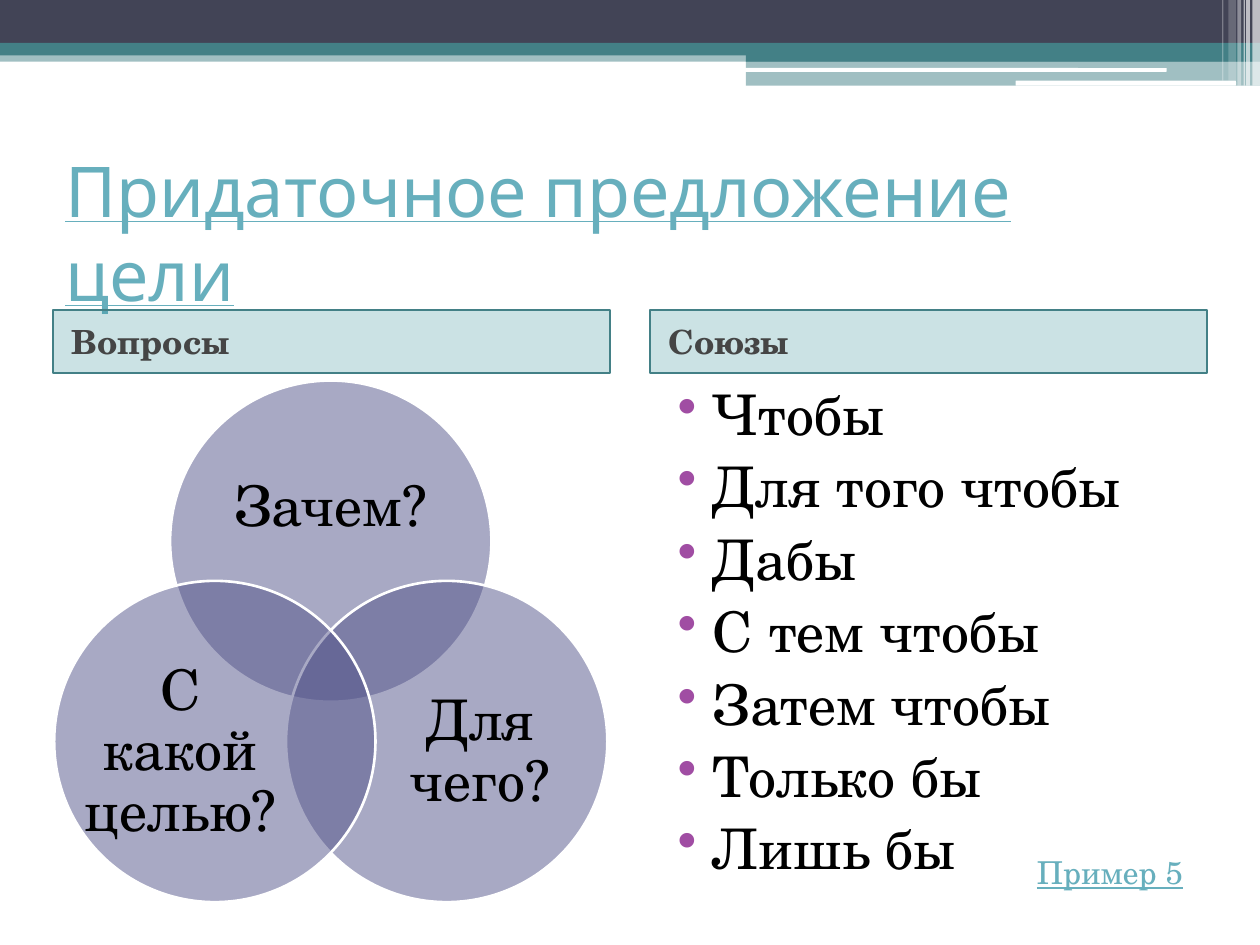
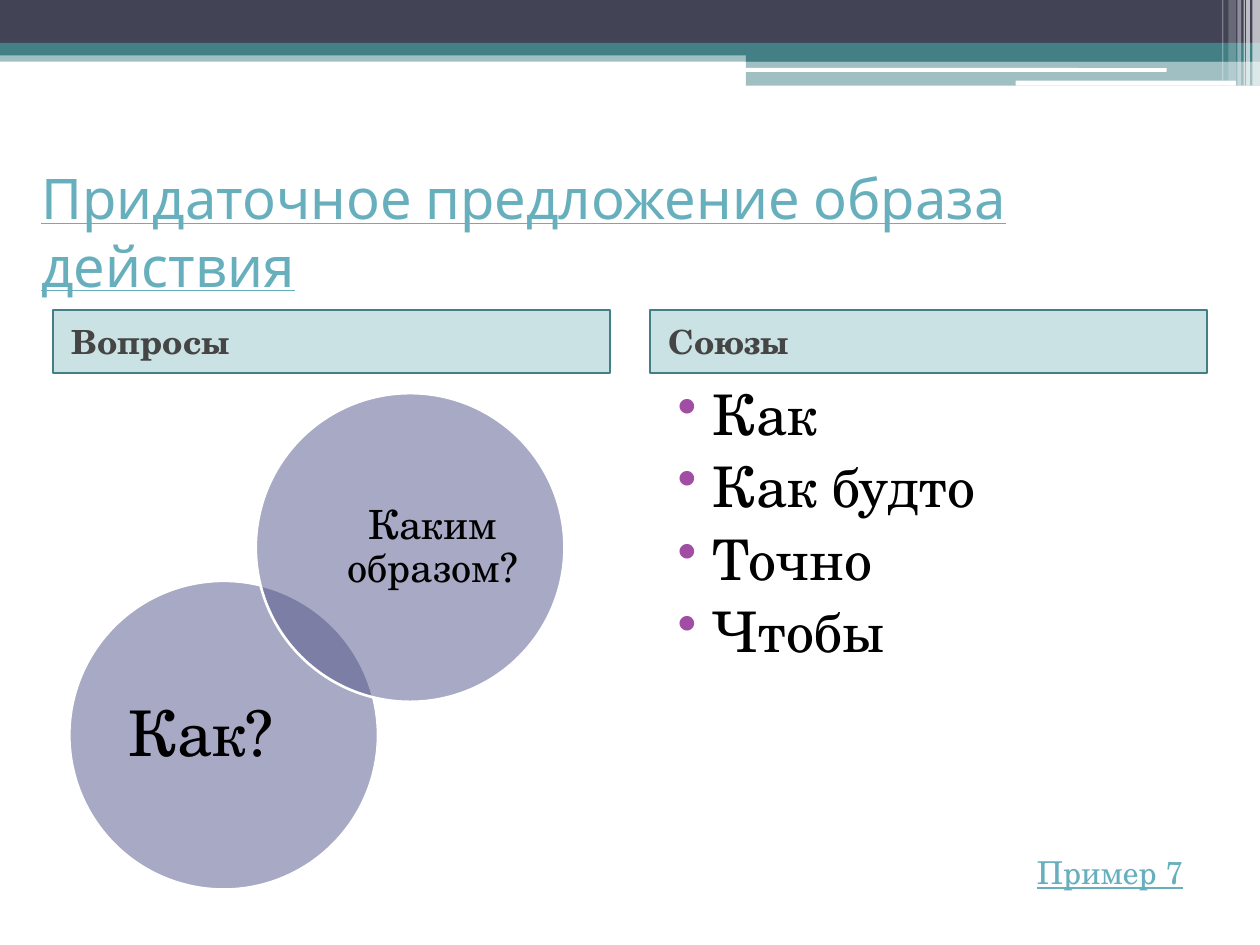
from pptx import Presentation
from pptx.dml.color import RGBColor
from pptx.enum.shapes import MSO_SHAPE as Kind
from pptx.enum.text import MSO_ANCHOR as Anchor, PP_ALIGN as Align
from pptx.oxml.ns import qn
from pptx.oxml.xmlchemy import OxmlElement as Node
from pptx.util import Inches, Pt

# Grid: 100 columns by 75 rows of square cells
CELL = Inches(0.1)
COLS, ROWS = 100, 75

DARK = RGBColor(0x42, 0x44, 0x56)
TEAL = RGBColor(0x43, 0x80, 0x86)
AQUA = RGBColor(0x32, 0x8E, 0x97)
LINK = RGBColor(0x67, 0xAF, 0xBD)
VIOLET = RGBColor(0x53, 0x54, 0x8A)
PURPLE = RGBColor(0xA0, 0x4D, 0xA3)
GRAY = RGBColor(0x45, 0x45, 0x45)
BLACK = RGBColor(0, 0, 0)
WHITE = RGBColor(0xFF, 0xFF, 0xFF)

HEAD, BODY = "Karla", "TeX Gyre Schola"
LEFT, RIGHT, WIDE = 4.2, 51.6, 44.2  # the two columns

# Bands: kind, x, y, width, height, colour, opacity
BANDS = [
    (Kind.RECTANGLE, 0, 4, COLS, 0.9, TEAL, 50),
    (Kind.RECTANGLE, 0, 0, COLS, 3.4, DARK, 100),
    (Kind.RECTANGLE, 0, 3.4, COLS, 1, TEAL, 100),
    (Kind.RECTANGLE, 59.2, 3.9, 40.8, 1, TEAL, 100),
    (Kind.RECTANGLE, 59.2, 4.8, 40.8, 2, TEAL, 50),
    (Kind.ROUNDED_RECTANGLE, 59.1, 5.4, 33.5, 0.3, WHITE, 100),
    (Kind.ROUNDED_RECTANGLE, 80.6, 6.4, 17.5, 0.4, WHITE, 100),
]
# Strips in the corner: x, width, height, opacity
STRIPS = [(99.4, 0.6, 6.8, 65), (98.9, 0.3, 6.8, 65), (98.7, 0.1, 6.8, 60),
          (98.2, 0.3, 6.8, 40), (97.5, 0.6, 6.4, 20), (97, 0.1, 6.4, 30)]

# Label areas inside a circle, as shares of its diameter
TOP = (0.133, 0.173, 0.733, 0.45)
LOW_R = (0.306, 0.26, 0.6, 0.55)
LOW_L = (0.094, 0.26, 0.6, 0.55)
PAIR_L = (0.14, 0.12, 0.575, 0.763)
PAIR_R = (0.286, 0.12, 0.575, 0.763)


def cells(*nums):
    return [round(n * CELL) for n in nums]


def shape(slide, kind, area, color, alpha=100, edge=None, width=1):
    item = slide.shapes.add_shape(kind, *cells(*area))
    item.shadow.inherit = False
    item.fill.solid()
    item.fill.fore_color.rgb = color
    if alpha < 100:
        tint = item.element.spPr.find(qn("a:solidFill"))[0]
        node = Node("a:alpha")
        node.set("val", str(alpha * 1000))
        tint.append(node)
    if edge is None:
        item.line.fill.background()
    else:
        item.line.color.rgb = edge
        item.line.width = Pt(width)
    return item


def write(frame, lines, size, color, face=BODY, bold=False, under=False,
          align=Align.LEFT, anchor=Anchor.MIDDLE):
    frame.word_wrap = True
    frame.vertical_anchor = anchor
    frame.text = "\n".join(lines)
    for para in frame.paragraphs:
        para.alignment = align
        for run in para.runs:
            font = run.font
            font.name, font.size, font.color.rgb = face, Pt(size), color
            font.bold, font.underline = bold, under
    return frame


def text(slide, area, lines, size, color, **style):
    box = slide.shapes.add_textbox(*cells(*area))
    return write(box.text_frame, lines, size, color, **style)


def indent(para, left, first=0):
    props = para._p.get_or_add_pPr()
    props.set("marL", str(Inches(left)))
    props.set("indent", str(Inches(first)))
    para.space_before = Pt(3)
    return props


def bands(slide):
    for kind, x, y, w, h, color, alpha in BANDS:
        shape(slide, kind, (x, y, w, h), color, alpha)
    for x, w, h, alpha in STRIPS:
        shape(slide, Kind.RECTANGLE, (x, 0, w, h), WHITE, alpha)


def header(slide, x, label):
    bar = shape(slide, Kind.RECTANGLE, (x, 24.6, WIDE, 5), AQUA, 25, TEAL)
    frame = write(bar.text_frame, [label], 19, GRAY, bold=True)
    indent(frame.paragraphs[0], 0.05)


def circle(slide, x, y, size, spot, label, points):
    shape(slide, Kind.OVAL, (x, y, size, size), VIOLET, 50, WHITE, 1.5)
    dx, dy, w, h = (size * part for part in spot)
    frame = text(slide, (x + dx, y + dy, w, h), [label], points, BLACK,
                 align=Align.CENTER)
    frame.margin_left = frame.margin_right = 0
    frame.margin_top = frame.margin_bottom = 0
    frame.paragraphs[0].line_spacing = 0.9


def bullets(slide, words):
    frame = text(slide, (RIGHT, 29.6, WIDE, 42.5), words, 32, BLACK,
                 anchor=Anchor.TOP)
    for para in frame.paragraphs:
        props = indent(para, 0.4, -0.28)
        tint, dot = Node("a:buClr"), Node("a:buChar")
        color = Node("a:srgbClr")
        color.set("val", str(PURPLE))
        tint.append(color)
        dot.set("char", "•")
        props.extend([tint, dot])


def page(deck, title, x, points, size, circles, words, link):
    slide = deck.slides.add_slide(deck.slide_layouts[6])
    bands(slide)
    text(slide, (x, 12.5, COLS - 2 * x, 11.7), [title], points, LINK,
         face=HEAD, under=True)
    header(slide, LEFT, "Вопросы")
    header(slide, RIGHT, "Союзы")
    for left, top, *label in circles:
        circle(slide, left, top, size, *label)
    bullets(slide, words)
    text(slide, (81.3, 67.2, 14.8, 4), [link], 18, LINK, under=True,
         anchor=Anchor.TOP)


def main():
    deck = Presentation()
    deck.slide_width, deck.slide_height = cells(COLS, ROWS)

    # Clause of purpose
    page(deck, "Придаточное предложение цели", 4.2, 40, 25.5,
         [(13.5, 30.2, TOP, "Зачем?", 32),
          (22.7, 46.1, LOW_R, "Для чего?", 32),
          (4.3, 46.1, LOW_L, "С какой целью?", 32)],
         ["Чтобы", "Для того чтобы", "Дабы", "С тем чтобы",
          "Затем чтобы", "Только бы", "Лишь бы"], "Пример 5")

    # Clause of manner
    page(deck, "Придаточное предложение образа действия", 2.3, 32, 24.5,
         [(5.5, 46.1, PAIR_L, "Как?", 36),
          (20.3, 31.2, PAIR_R, "Каким образом?", 23)],
         ["Как", "Как будто", "Точно", "Чтобы"], "Пример 7")

    deck.save("out.pptx")


if __name__ == "__main__":
    main()
